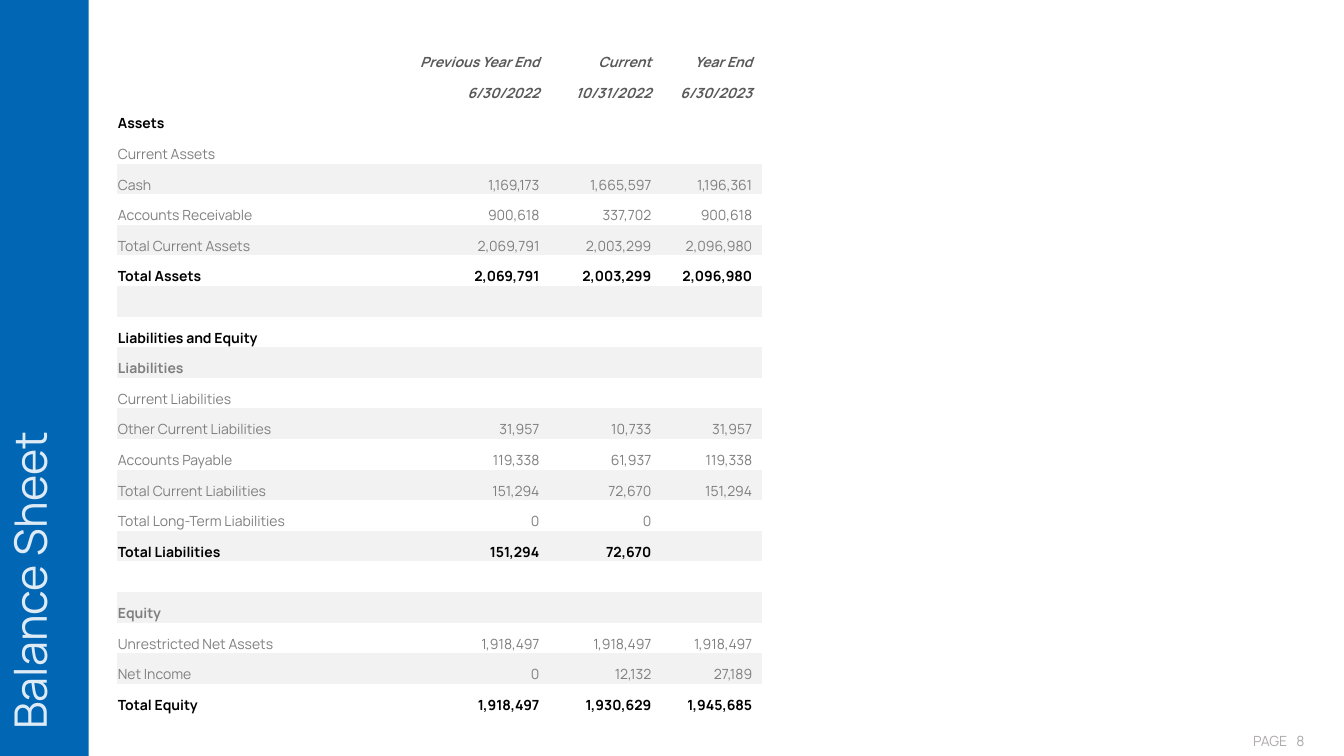
from dataclasses import dataclass

from lxml import etree
from pptx import Presentation
from pptx.dml.color import RGBColor
from pptx.enum.shapes import MSO_SHAPE
from pptx.enum.text import MSO_ANCHOR, PP_ALIGN
from pptx.oxml.ns import qn
from pptx.util import Inches, Pt

RECTANGLE = MSO_SHAPE.RECTANGLE
TOP, BOTTOM = MSO_ANCHOR.TOP, MSO_ANCHOR.BOTTOM
LEFT, RIGHT = PP_ALIGN.LEFT, PP_ALIGN.RIGHT
NO_STYLE_NO_GRID = "{2D5ABB26-0587-4C30-8999-92F81FD0307C}"


@dataclass(frozen=True)
class Theme:
    font: str = "Manrope"
    title_size: int = 32
    body_size: int = 10
    bar: str = "0166B3"
    title: str = "DEEBF7"
    page_number: str = "AFABAB"
    heading: str = "595959"
    strong: str = "000000"
    plain: str = "7F7F7F"
    band: str = "F2F2F2"


THEME = Theme()

# Row kind: text colour, bold, italic
ROW_STYLES = {
    "heading": (THEME.heading, True, True),
    "strong": (THEME.strong, True, False),
    "group": (THEME.plain, True, False),
    "plain": (THEME.plain, False, False),
}

BALANCE_ROWS = [
    ("heading", "", "Previous Year End", "Current", "Year End"),
    ("heading", "", "6/30/2022", "10/31/2022", "6/30/2023"),
    ("strong", "Assets", "", "", ""),
    ("plain", "Current Assets", "", "", ""),
    ("plain", "Cash", "1,169,173", "1,665,597", "1,196,361"),
    ("plain", "Accounts Receivable", "900,618", "337,702", "900,618"),
    ("plain", "Total Current Assets", "2,069,791", "2,003,299", "2,096,980"),
    ("strong", "Total Assets", "2,069,791", "2,003,299", "2,096,980"),
    ("plain", "", "", "", ""),
    ("strong", "Liabilities and Equity", "", "", ""),
    ("group", "Liabilities", "", "", ""),
    ("plain", "Current Liabilities", "", "", ""),
    ("plain", "Other Current Liabilities", "31,957", "10,733", "31,957"),
    ("plain", "Accounts Payable", "119,338", "61,937", "119,338"),
    ("plain", "Total Current Liabilities", "151,294", "72,670", "151,294"),
    ("plain", "Total Long-Term Liabilities", "0", "0", ""),
    ("strong", "Total Liabilities", "151,294", "72,670", ""),
    ("plain", "", "", "", ""),
    ("group", "Equity", "", "", ""),
    ("plain", "Unrestricted Net Assets", "1,918,497", "1,918,497", "1,918,497"),
    ("plain", "Net Income", "0", "12,132", "27,189"),
    ("strong", "Total Equity", "1,918,497", "1,930,629", "1,945,685"),
]
COLUMN_WIDTHS = (2.5, 1.79, 1.11, 1)
FIRST_BAND = 4


def write(frame, text, size, color, align=LEFT, bold=False, italic=False):
    """Fill a text frame with one formatted line; an empty line keeps its size."""
    frame.text = text
    para = frame.paragraphs[0]
    para.alignment = align
    for span in para.runs:
        span.font.name = THEME.font
        span.font.size = Pt(size)
        span.font.color.rgb = RGBColor.from_string(color)
        span.font.bold = bold
        span.font.italic = italic
    if not text:
        etree.SubElement(para._p, qn("a:endParaRPr"), sz=str(size * 100))


deck = Presentation()
deck.slide_width, deck.slide_height = Inches(13.33), Inches(7.5)
page = deck.slides.add_slide(deck.slide_layouts[6])

# Page number
for label, left, width in (("PAGE", 12.33, 0.57), ("8", 12.76, 0.43)):
    box = page.shapes.add_textbox(Inches(left), Inches(7.22), Inches(width), Inches(0.27))
    box.text_frame.word_wrap = label != "PAGE"
    write(box.text_frame, label, THEME.body_size, THEME.page_number)

# Title bar with upward text
bar = page.shapes.add_shape(RECTANGLE, 0, 0, Inches(0.88), deck.slide_height)
bar.shadow.inherit = False
bar.fill.solid()
bar.fill.fore_color.rgb = RGBColor.from_string(THEME.bar)
bar.line.fill.background()
title_frame = bar.text_frame
title_frame.vertical_anchor = TOP
title_frame.margin_left = Inches(0.02)
title_frame.margin_bottom = Inches(0.26)
title_frame._txBody.bodyPr.set("vert", "vert270")
write(title_frame, "Balance Sheet", THEME.title_size, THEME.title)

# Balance sheet
table_frame = page.shapes.add_table(
    len(BALANCE_ROWS), len(COLUMN_WIDTHS),
    Inches(1.16), Inches(0.41), Inches(6.4), Inches(6.68),
)
table = table_frame.table
table.first_row = False
table.horz_banding = False
for style_id in table_frame.element.iter(qn("a:tableStyleId")):
    style_id.text = NO_STYLE_NO_GRID
for column, width in zip(table.columns, COLUMN_WIDTHS):
    column.width = Inches(width)

for row_index, (kind, *texts) in enumerate(BALANCE_ROWS):
    color, bold, italic = ROW_STYLES[kind]
    banded = row_index >= FIRST_BAND and row_index % 2 == 0
    for column_index, text in enumerate(texts):
        cell = table.cell(row_index, column_index)
        is_label = column_index == 0
        cell.vertical_anchor = BOTTOM
        cell.margin_left = cell.margin_top = Inches(0.01)
        cell.margin_right = Inches(0.01 if is_label else 0.1)
        cell.margin_bottom = 0
        if banded:
            cell.fill.solid()
            cell.fill.fore_color.rgb = RGBColor.from_string(THEME.band)
        else:
            cell.fill.background()
        write(cell.text_frame, text, THEME.body_size, color,
              LEFT if is_label else RIGHT, bold, italic)

deck.save("out.pptx")
